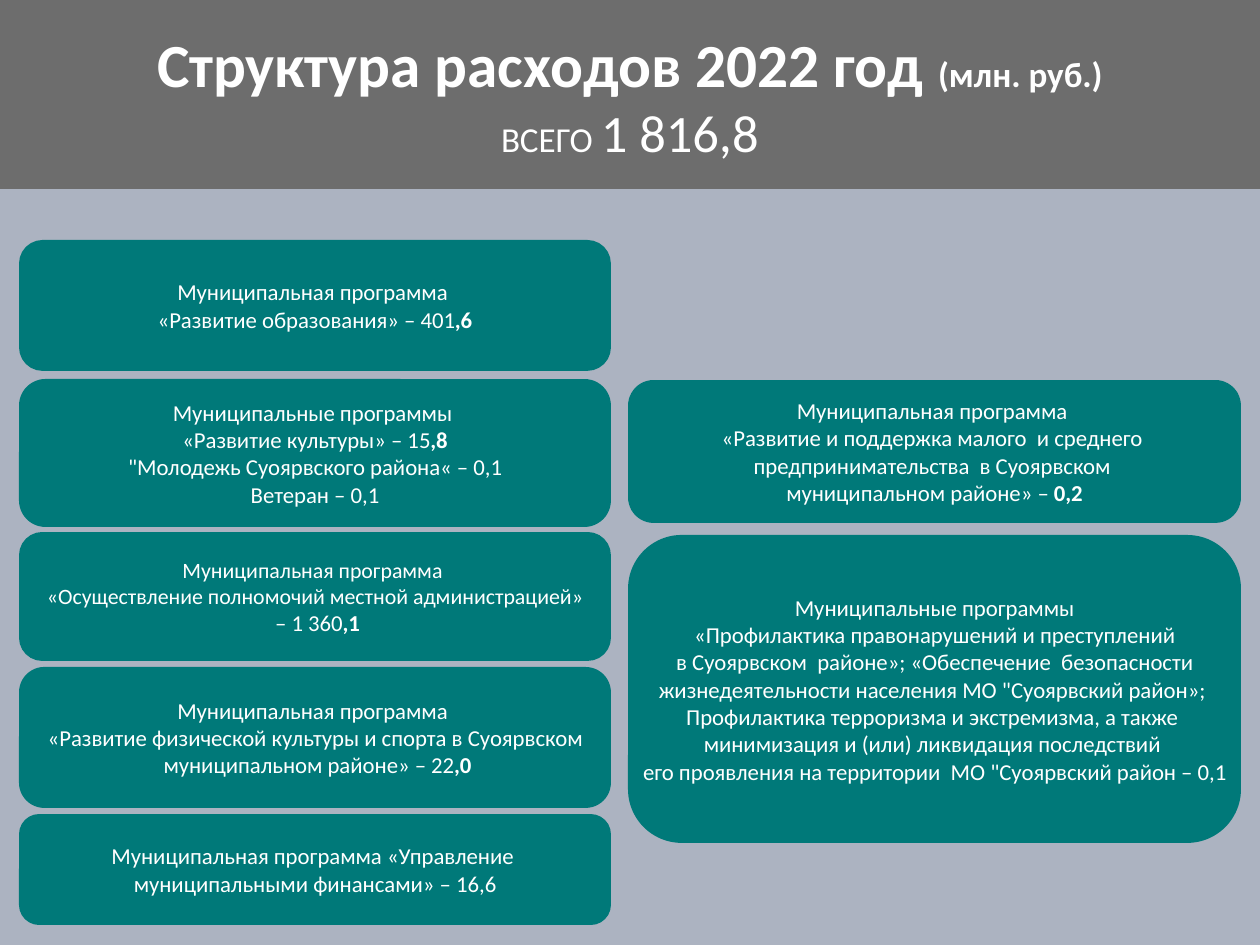
"""Build the slide on the structure of municipal spending in 2022."""
from pptx import Presentation
from pptx.dml.color import RGBColor
from pptx.enum.shapes import MSO_SHAPE
from pptx.enum.text import MSO_ANCHOR, MSO_AUTO_SIZE, PP_ALIGN
from pptx.util import Emu, Pt

SCALE = 914400 / 126
COLORS = {"back": "ACB3C1", "head": "6D6D6D", "card": "007979", "text": "FFFFFF"}


def add_box(kind, place, color):
    box = slide.shapes.add_shape(kind, *[Emu(round(n * SCALE)) for n in place])
    box.shadow.inherit = False
    box.fill.solid()
    box.fill.fore_color.rgb = RGBColor.from_string(COLORS[color])
    box.line.fill.background()
    box.text_frame.vertical_anchor = MSO_ANCHOR.MIDDLE
    return box


def add_line(frame, first, parts):
    para = frame.paragraphs[0] if first else frame.add_paragraph()
    para.alignment = PP_ALIGN.CENTER
    for text, size, bold in parts:
        run = para.add_run()
        run.text = text
        run.font.name = "Calibri"
        run.font.size = Pt(size)
        run.font.bold = bold
        run.font.color.rgb = RGBColor.from_string(COLORS["text"])


deck = Presentation()
deck.slide_width = Emu(round(1260 * SCALE))
deck.slide_height = Emu(round(945 * SCALE))
slide = deck.slides.add_slide(deck.slide_layouts[6])
slide.background.fill.solid()
slide.background.fill.fore_color.rgb = RGBColor.from_string(COLORS["back"])

head = add_box(MSO_SHAPE.RECTANGLE, (0, 0, 1260, 189), "head").text_frame
head.word_wrap = True
add_line(head, True, [("Структура расходов 2022 год ", 35, True), ("(млн. руб.)", 20, True)])
add_line(head, False, [("ВСЕГО ", 20, False), ("1 816,8", 30, False)])

LEFT, RIGHT = (21, 588), (630, 609)
CARDS = [
    (LEFT, 242, 127, [
        "Муниципальная программа ",
        "«Развитие образования» – 401|,6",
    ]),
    (LEFT, 381, 144, [
        "Муниципальные программы ",
        "«Развитие культуры» – 15|,8",
        "\"Молодежь Суоярвского района« – 0,1",
        "Ветеран – 0,1",
    ]),
    (LEFT, 534, 125, [
        "Муниципальная программа ",
        "«Осуществление полномочий местной администрацией»",
        " – 1 360|,1",
    ]),
    (LEFT, 669, 137, [
        "Муниципальная программа ",
        "«Развитие физической культуры и спорта в Суоярвском",
        " муниципальном районе» – 22|,0",
    ]),
    (LEFT, 816, 107, [
        "Муниципальная программа «Управление ",
        "муниципальными финансами» – 16,6",
    ]),
    (RIGHT, 382, 139, [
        "Муниципальная программа ",
        "«Развитие и поддержка малого  и среднего ",
        "предпринимательства  в Суоярвском ",
        "муниципальном районе» – |0,2",
    ]),
    (RIGHT, 537, 304, [
        "Муниципальные программы",
        "«Профилактика правонарушений и преступлений",
        " в Суоярвском  районе»; «Обеспечение  безопасности ",
        "жизнедеятельности населения МО \"Суоярвский район»; ",
        "Профилактика терроризма и экстремизма, а также ",
        "минимизация и (или) ликвидация последствий ",
        "его проявления на территории  МО \"Суоярвский район – 0,1",
    ]),
]

for (left, width), top, height, lines in CARDS:
    card = add_box(MSO_SHAPE.ROUNDED_RECTANGLE, (left, top, width, height), "card")
    card.adjustments[0] = 0.17
    card.line.color.rgb = RGBColor.from_string(COLORS["card"])
    card.line.width = Pt(2.25)
    frame = card.text_frame
    frame.word_wrap = False
    frame.auto_size = MSO_AUTO_SIZE.NONE
    frame.margin_left = frame.margin_right = frame.margin_top = frame.margin_bottom = 0
    tight = any("Осуществление" in line for line in lines)
    for row, line in enumerate(lines):
        size = 12.5 if tight and row < 2 else 13
        plain, _, strong = line.partition("|")
        parts = [(plain, size, False), (strong, size, True)]
        add_line(frame, row == 0, [part for part in parts if part[0]])

deck.save("out.pptx")
